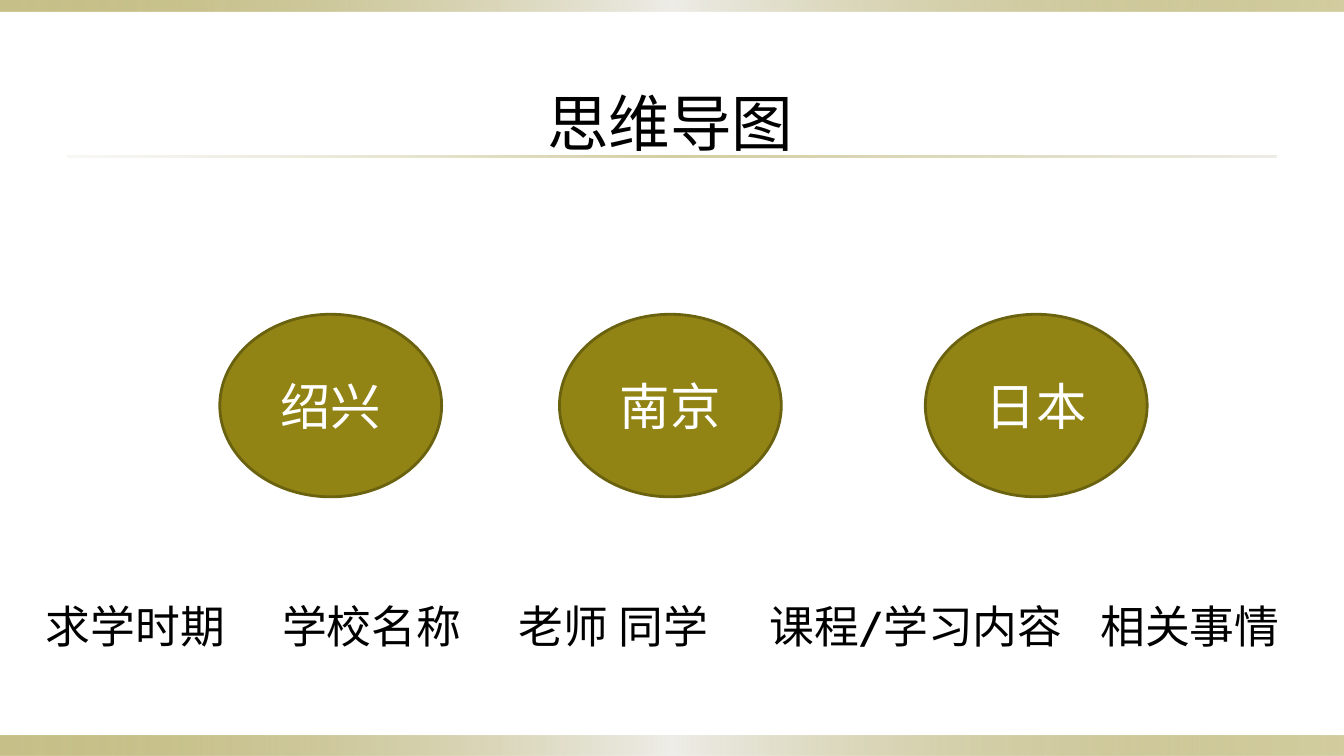
from lxml.etree import SubElement
from pptx import Presentation
from pptx.dml.color import RGBColor
from pptx.enum.shapes import MSO_SHAPE
from pptx.enum.text import MSO_ANCHOR, MSO_AUTO_SIZE, PP_ALIGN
from pptx.oxml.ns import qn
from pptx.util import Cm, Pt

COLOURS = {
    "olive": "918415",
    "outline": "6B6210",
    "pale": "EEEDE8",
    "sand": "DCD9CC",
    "text": "000000",
    "white": "FFFFFF",
}
FONT = "Cabin"
SLIDE_WIDTH, SLIDE_HEIGHT = 33.87, 19.05

BAND_STOPS = [(0, "olive", 50), (50, "pale", 100), (100, "olive", 40)]
RULE_STOPS = [(0, "sand", 20), (50, "olive", 40), (100, "sand", 50)]


def colour(name):
    return RGBColor.from_string(COLOURS[name])


def write(frame, words, size, tone, align):
    frame.text = words
    frame.word_wrap = True
    paragraph = frame.paragraphs[0]
    paragraph.alignment = align
    font = paragraph.runs[0].font
    font.name = FONT
    font.size = Pt(size)
    font.color.rgb = colour(tone)


def add_gradient_bar(slide, left, top, width, height, stops):
    bar = slide.shapes.add_shape(
        MSO_SHAPE.RECTANGLE, Cm(left), Cm(top), Cm(width), Cm(height))
    bar.shadow.inherit = False
    bar.line.fill.background()
    bar.fill.gradient()
    bar.fill.gradient_angle = 0
    stop_list = bar.element.spPr.find(".//" + qn("a:gsLst"))
    for default_stop in list(stop_list):
        stop_list.remove(default_stop)
    for position, tone, opacity in stops:
        stop = SubElement(stop_list, qn("a:gs"), pos=str(position * 1000))
        shade = SubElement(stop, qn("a:srgbClr"), val=COLOURS[tone])
        SubElement(shade, qn("a:alpha"), val=str(opacity * 1000))


def add_frame(slide, width, height):
    bottom_band, top_band = 0.51, 0.3
    margin = 1.7
    add_gradient_bar(slide, 0, height - bottom_band, width, bottom_band, BAND_STOPS)
    add_gradient_bar(slide, 0, 0, width, top_band, BAND_STOPS)
    add_gradient_bar(slide, margin, 3.91, width - 2 * margin, 0.06, RULE_STOPS)


def add_title(slide, left, top, width, height):
    title = slide.shapes.title
    title.left, title.top = Cm(left), Cm(top)
    title.width, title.height = Cm(width), Cm(height)
    write(title.text_frame, "思维导图", 44, "text", PP_ALIGN.CENTER)
    title.text_frame.vertical_anchor = MSO_ANCHOR.TOP
    title.text_frame.auto_size = MSO_AUTO_SIZE.SHAPE_TO_FIT_TEXT


def add_cities(slide, left, top, width, height):
    cities = [("绍兴", 0), ("南京", 8.56), ("日本", 17.78)]
    for name, offset in cities:
        city = slide.shapes.add_shape(
            MSO_SHAPE.OVAL, Cm(left + offset), Cm(top), Cm(width), Cm(height))
        city.shadow.inherit = False
        city.fill.solid()
        city.fill.fore_color.rgb = colour("olive")
        city.line.color.rgb = colour("outline")
        city.line.width = Pt(2)
        write(city.text_frame, name, 36, "white", PP_ALIGN.CENTER)
        city.text_frame.vertical_anchor = MSO_ANCHOR.MIDDLE


def add_topics(slide, left, top, height):
    topics = [
        ("求学时期", 0, 5.97),
        ("学校名称", 5.95, 5.97),
        ("老师 同学", 11.92, 5.97),
        ("课程/学习内容", 18.24, 8.33),
        ("相关事情", 26.57, 5.97),
    ]
    for words, offset, width in topics:
        topic = slide.shapes.add_textbox(
            Cm(left + offset), Cm(top), Cm(width), Cm(height))
        write(topic.text_frame, words, 32, "text", PP_ALIGN.LEFT)
        topic.text_frame.auto_size = MSO_AUTO_SIZE.SHAPE_TO_FIT_TEXT


def main():
    deck = Presentation()
    deck.slide_width, deck.slide_height = Cm(SLIDE_WIDTH), Cm(SLIDE_HEIGHT)
    slide = deck.slides.add_slide(deck.slide_layouts.get_by_name("Title Only"))
    slide.background.fill.solid()
    slide.background.fill.fore_color.rgb = colour("white")
    add_frame(slide, SLIDE_WIDTH, SLIDE_HEIGHT)
    add_cities(slide, 5.54, 7.92, 5.59, 4.6)
    add_title(slide, 10.85, 2.01, 12.09, 2.13)
    add_topics(slide, 0.91, 14.96, 1.63)
    deck.save("out.pptx")


if __name__ == "__main__":
    main()
